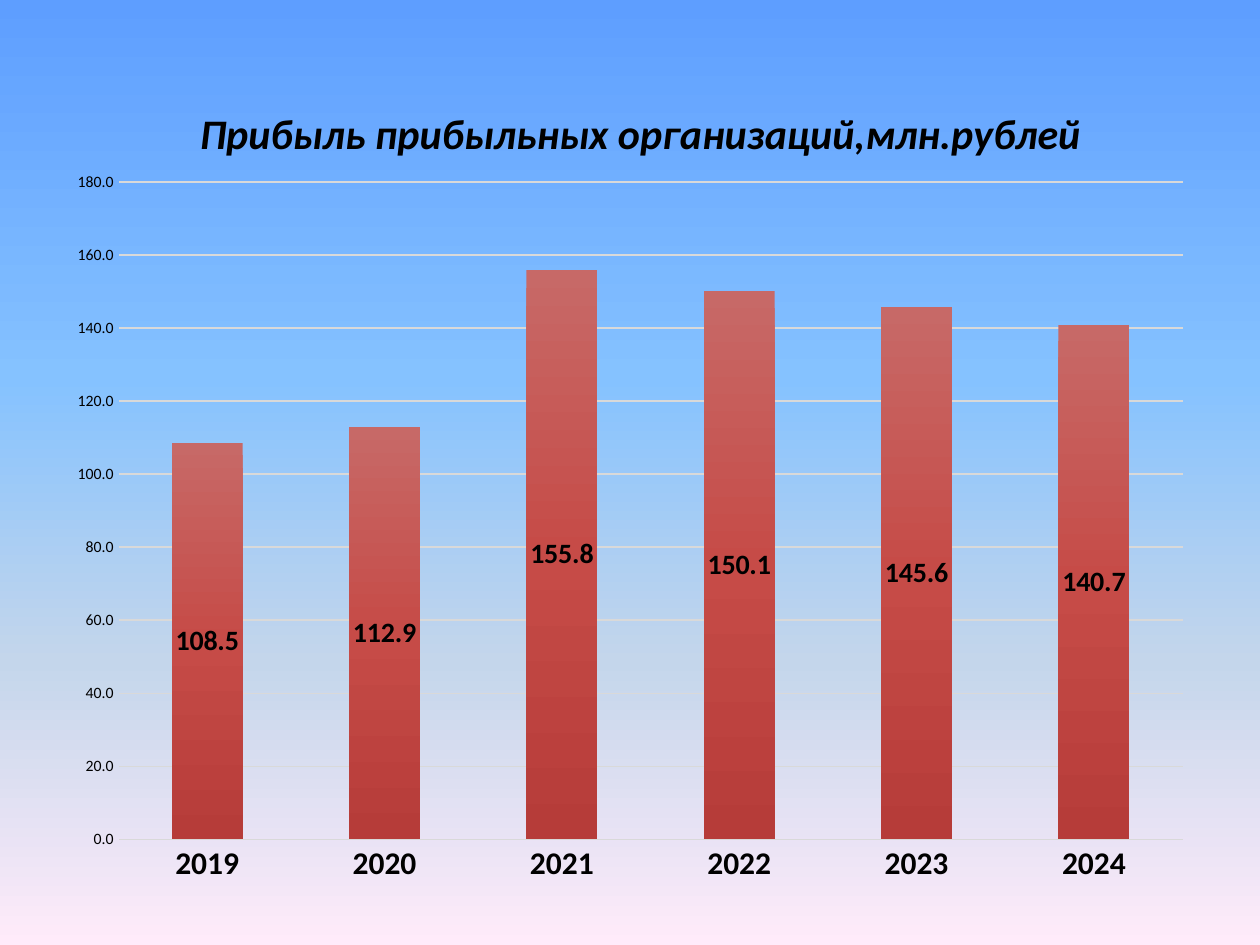
from lxml import etree
from pptx import Presentation
from pptx.chart.data import CategoryChartData
from pptx.dml.color import RGBColor
from pptx.enum.chart import XL_CHART_TYPE, XL_LABEL_POSITION, XL_TICK_MARK
from pptx.oxml.ns import qn
from pptx.util import Inches, Pt

STACKED = XL_CHART_TYPE.COLUMN_STACKED
CENTER = XL_LABEL_POSITION.CENTER
NO_TICK = XL_TICK_MARK.NONE

TITLE = "Прибыль прибыльных организаций,млн.рублей"
PROFITS = {"2019": 108.5, "2020": 112.9, "2021": 155.8,
           "2022": 150.1, "2023": 145.6, "2024": 140.7}
SKY = [(0, "5E9EFF"), (40, "85C2FF"), (70, "C4D6EB"), (100, "FFEBFA")]
RED = [(0, "C76967"), (50, "C64B47"), (100, "B63C39")]


def color(value):
    return RGBColor.from_string(value)


def set_font(font, size, bold=False, italic=False):
    font.name = "Calibri"
    font.size = Pt(size)
    font.bold = bold
    font.italic = italic
    font.color.rgb = color("000000")


def fill_downward(fill, owner, stops):
    """Gradient from top to bottom through (percent, colour) stops."""
    fill.gradient()
    fill.gradient_angle = 270
    stop_list = next(owner.iter(qn("a:gsLst")))
    for old in list(stop_list):
        stop_list.remove(old)
    for percent, value in stops:
        stop = etree.SubElement(stop_list, qn("a:gs"), pos=str(percent * 1000))
        etree.SubElement(stop, qn("a:srgbClr"), val=value)


def set_layout(element, **settings):
    """Manual chart layout; positions are fractions of the chart."""
    layout = element.find(qn("c:layout"))
    if layout is None:
        layout = etree.Element(qn("c:layout"))
        element.insert(0, layout)
    manual = etree.SubElement(layout, qn("c:manualLayout"))
    for name, value in settings.items():
        etree.SubElement(manual, qn(f"c:{name}"), val=str(value))


def style_axis(axis, size, bold=False):
    axis.major_tick_mark = axis.minor_tick_mark = NO_TICK
    axis.format.line.fill.background()
    set_font(axis.tick_labels.font, size, bold)


def add_profit_chart(page, left, top, width, height):
    data = CategoryChartData(number_format="0.0")
    data.categories = list(PROFITS)
    data.add_series(TITLE, list(PROFITS.values()))
    chart = page.shapes.add_chart(STACKED, left, top, width, height, data).chart
    set_font(chart.font, 10)
    chart.has_legend = False

    # Title
    chart.has_title = True
    para = chart.chart_title.text_frame.paragraphs[0]
    para.text = TITLE
    set_font(para.font, 24, bold=True, italic=True)
    set_layout(chart.chart_title._element,
               xMode="edge", yMode="edge", x=0.12, y=0.05)

    # Plot area and axes
    set_layout(next(chart._chartSpace.iter(qn("c:plotArea"))),
               layoutTarget="inner", xMode="edge", yMode="edge",
               x=0.056, y=0.15, w=0.925, h=0.78)
    style_axis(chart.category_axis, 18, bold=True)
    values = chart.value_axis
    style_axis(values, 9)
    values.minimum_scale, values.maximum_scale, values.major_unit = 0, 180, 20
    values.tick_labels.number_format = "0.0"
    values.tick_labels.number_format_is_linked = False
    grid = values.major_gridlines.format.line
    grid.color.rgb = color("D9D9D9")
    grid.width = Pt(0.75)

    # Columns and their labels
    plot = chart.plots[0]
    plot.gap_width, plot.overlap = 150, 100
    plot.vary_by_categories = False
    series = plot.series[0]
    fill_downward(series.format.fill, series._element, RED)
    labels = series.data_labels
    labels.show_value = True
    labels.position = CENTER
    labels.number_format = "0.0"
    labels.number_format_is_linked = False
    set_font(labels.font, 16, bold=True)


def main():
    deck = Presentation()
    deck.slide_width, deck.slide_height = Inches(10), Inches(7.5)
    page = deck.slides.add_slide(deck.slide_layouts[6])
    fill_downward(page.background.fill, page._element, SKY)
    add_profit_chart(page, Inches(0.43), Inches(0.44), Inches(9.13), Inches(6.69))
    deck.save("out.pptx")


if __name__ == "__main__":
    main()
